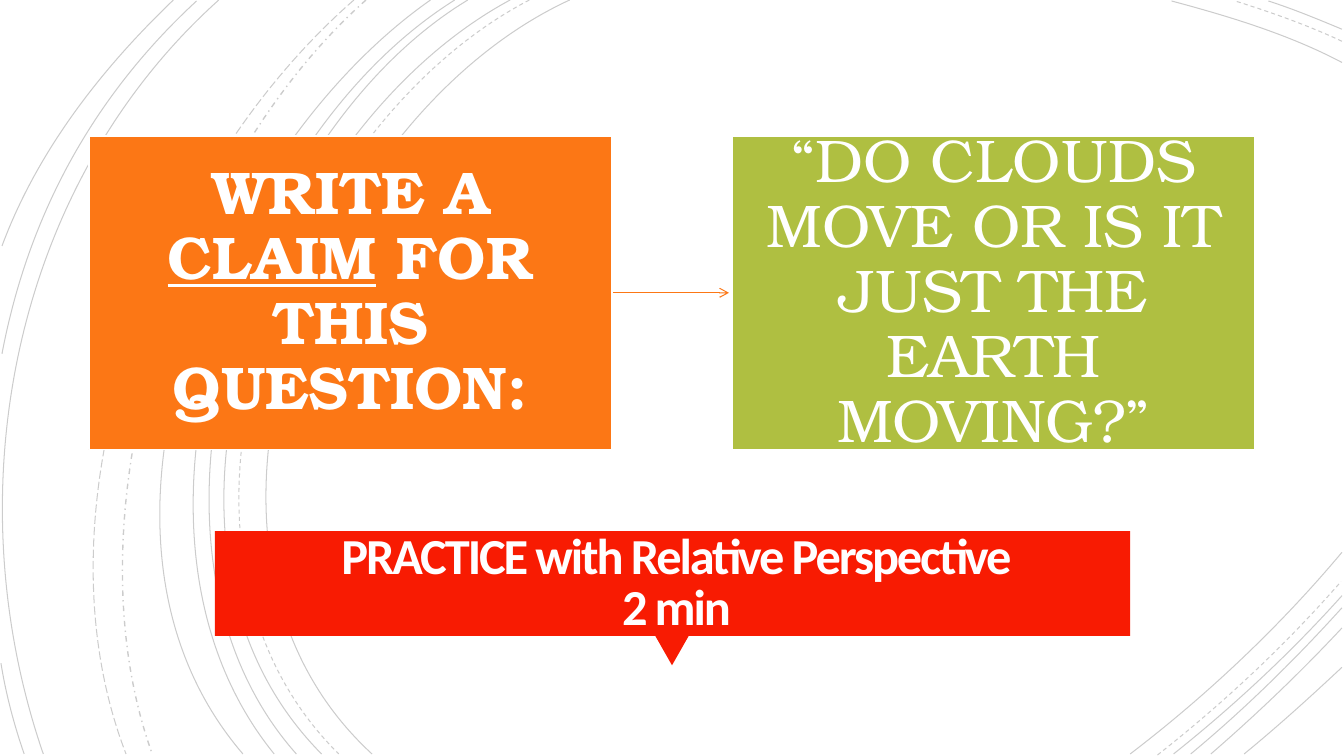
from lxml import etree
from pptx import Presentation, util as u
from pptx.dml.color import RGBColor
from pptx.enum import dml, shapes, text
from pptx.oxml.ns import qn

HUES = {"arc": "000000", "red": "F81B02", "orange": "FC7715",
        "green": "AFBF41", "white": "FFFFFF", "title": "FFFEFF"}
SOLID, DASH = dml.MSO_LINE.SOLID, dml.MSO_LINE.DASH
DOT, LONG = dml.MSO_LINE.DASH_DOT, dml.MSO_LINE.LONG_DASH

# Each arc: dash style, then start, two control points and end in inches
ARCS = [
    # Large arcs on the left
    (SOLID, (5.65, 0), (3.15, 1.15), (1.43, 5.4), (3.69, 7.48)),
    (DASH, (5.25, 0), (2.85, 1.25), (1.23, 5.37), (3.36, 7.48)),
    (SOLID, (5.06, 0), (2.7, 1.27), (1.1, 5.37), (3.19, 7.48)),
    (SOLID, (4.64, 0), (2.44, 1.33), (1.1, 5.41), (2.94, 7.48)),
    (SOLID, (4.51, 0), (2.31, 1.38), (0.97, 5.33), (2.72, 7.48)),
    (SOLID, (4.27, 0), (2.17, 1.47), (0.53, 5.29), (2.41, 7.48)),
    (DOT, (3.63, 0), (1.76, 1.66), (0.65, 5.09), (1.51, 7.48)),
    (LONG, (3.51, 0), (1.57, 1.69), (0.29, 4.99), (1.25, 7.48)),
    (SOLID, (2.17, 0), (0.11, 1.85), (-0.46, 4.9), (0.43, 7.48)),
    (SOLID, (1.95, 0.01), (0.92, 0.96), (0.28, 2.14), (0.02, 3.51)),
    (SOLID, (0.01, 6.58), (0.06, 6.89), (0.14, 7.19), (0.24, 7.48)),
    (SOLID, (1.72, 0), (1, 0.69), (0.37, 1.5), (0.02, 2.44)),
    # Top right corner
    (SOLID, (13.31, 0.62), (12.78, 0.34), (12.18, 0.16), (11.62, 0.01)),
    (DASH, (13.31, 0.41), (12.97, 0.25), (12.6, 0.12), (12.25, 0.01)),
    (SOLID, (13.31, 0.29), (13.07, 0.19), (12.83, 0.09), (12.58, 0.01)),
    # Bottom right corner
    (SOLID, (11.21, 7.48), (11.97, 6.9), (12.69, 6.22), (13.31, 5.48)),
    (DASH, (11.48, 7.49), (12.13, 6.98), (12.75, 6.4), (13.3, 5.77)),
    (SOLID, (11.64, 7.48), (12.23, 7.01), (12.8, 6.48), (13.31, 5.91)),
    (SOLID, (11.81, 7.48), (12.34, 7.04), (12.84, 6.55), (13.31, 6.03)),
    (SOLID, (12.01, 7.48), (12.46, 7.09), (12.9, 6.67), (13.31, 6.23)),
    (SOLID, (12.34, 7.48), (12.67, 7.21), (12.99, 6.92), (13.31, 6.62)),
]


def hue(name):
    return RGBColor.from_string(HUES[name])


def bend(arc):
    """Turn the three straight segments of an arc into one cubic curve."""
    route = arc._element.find(".//" + qn("a:path"))
    legs = route.findall(qn("a:lnTo"))
    cubic = etree.SubElement(route, qn("a:cubicBezTo"))
    for leg in legs:
        cubic.append(leg[0])
        route.remove(leg)


def add_arcs(slide):
    for dash, *ends in ARCS:
        first, *rest = [tuple(map(u.Inches, end)) for end in ends]
        pen = slide.shapes.build_freeform(*first)
        pen.add_line_segments(rest, close=False)
        arc = pen.convert_to_shape()
        bend(arc)
        arc.shadow.inherit = False
        arc.fill.background()
        arc.line.width = u.Pt(1 if dash == DOT else 0.75)
        arc.line.dash_style = dash
        arc.line.color.rgb = hue("arc")
        # Faint line: 20% opaque
        tint = arc.line._ln.find(".//" + qn("a:srgbClr"))
        etree.SubElement(tint, qn("a:alpha"), val="20000")


def add_block(slide, kind, box, fill):
    block = slide.shapes.add_shape(kind, *map(u.Inches, box))
    block.shadow.inherit = False
    block.fill.solid()
    block.fill.fore_color.rgb = hue(fill)
    block.line.fill.background()
    return block


def set_frame(frame, side, top, gap):
    frame.word_wrap = True
    frame.auto_size = text.MSO_AUTO_SIZE.NONE
    frame.vertical_anchor = text.MSO_ANCHOR.MIDDLE
    frame.margin_left = frame.margin_right = u.Inches(side)
    frame.margin_top = frame.margin_bottom = u.Inches(top)
    para = frame.paragraphs[0]
    para.alignment = text.PP_ALIGN.CENTER
    para.line_spacing = gap
    return para


def set_font(run, face, size, color, bold=False):
    run.font.name = face
    run.font.size = u.Pt(size)
    run.font.bold = bold
    run.font.color.rgb = hue(color)


def add_card(slide, box, fill, words, bold=False, under=None):
    card = add_block(slide, shapes.MSO_SHAPE.RECTANGLE, box, fill)
    card.line.color.rgb = hue("white")
    card.line.width = u.Pt(1.25)
    para = set_frame(card.text_frame, 0.25, 0.27, 0.9)
    for part in words:
        run = para.add_run()
        run.text = part
        set_font(run, "TeX Gyre Bonum", 43, "white", bold)
        if part == under:
            run.font.underline = True
    return card


def add_cards(slide, box):
    """Prompt, arrow and question side by side."""
    x, y, w, h = box
    wide, mid = 5.19, y + h / 2
    right = x + w - wide
    # The arrow stops just short of the question
    arrow = slide.shapes.add_connector(
        shapes.MSO_CONNECTOR.STRAIGHT,
        *map(u.Inches, (x + wide, mid, right - 0.03, mid)))
    arrow.line.color.rgb = hue("orange")
    arrow.line.width = u.Pt(0.75)
    etree.SubElement(arrow.line._ln, qn("a:tailEnd"), type="arrow")
    etree.SubElement(arrow._element.spPr, qn("a:effectLst"))
    prompt = add_card(slide, (x, y, wide, h), "orange",
                      ["WRITE A ", "CLAIM", " FOR THIS QUESTION:"],
                      bold=True, under="CLAIM")
    add_card(slide, (right, y, wide, h), "green",
             ["“DO CLOUDS MOVE OR IS IT JUST THE EARTH MOVING?”"])
    arrow.begin_connect(prompt, 3)


def add_banner(slide, box):
    """Red title banner with a pointer below it."""
    x, y, w, h = box
    tip = add_block(slide, shapes.MSO_SHAPE.ISOSCELES_TRIANGLE,
                    (x + w / 2 - 0.17, y + h, 0.33, 0.29), "red")
    tip.rotation = 180
    add_block(slide, shapes.MSO_SHAPE.RECTANGLE, box, "red")
    title = slide.shapes.title
    title.left, title.top, title.width, title.height = map(
        u.Inches, (x + 0.13, y + 0.11, 8.9, 0.84))
    title.text_frame.text = "PRACTICE with Relative Perspective\v2 min"
    para = set_frame(title.text_frame, 0.25, 0.25, 0.85)
    for run in para.runs:
        set_font(run, "Calibri", 36, "title", True)
        run.font._element.set("spc", "-150")
    # Bring the title in front of the banner
    slide.shapes._spTree.append(title._element)


def main():
    deck = Presentation()
    deck.slide_width, deck.slide_height = u.Inches(13.33), u.Inches(7.5)
    slide = deck.slides.add_slide(deck.slide_layouts[5])
    # White backdrop over the whole slide
    add_block(slide, shapes.MSO_SHAPE.RECTANGLE, (0, 0, 13.33, 7.5), "white")
    add_arcs(slide)
    add_banner(slide, (2.13, 5.27, 9.08, 1.04))
    add_cards(slide, (0.88, 1.35, 11.57, 3.11))
    deck.save("out.pptx")


if __name__ == "__main__":
    main()
